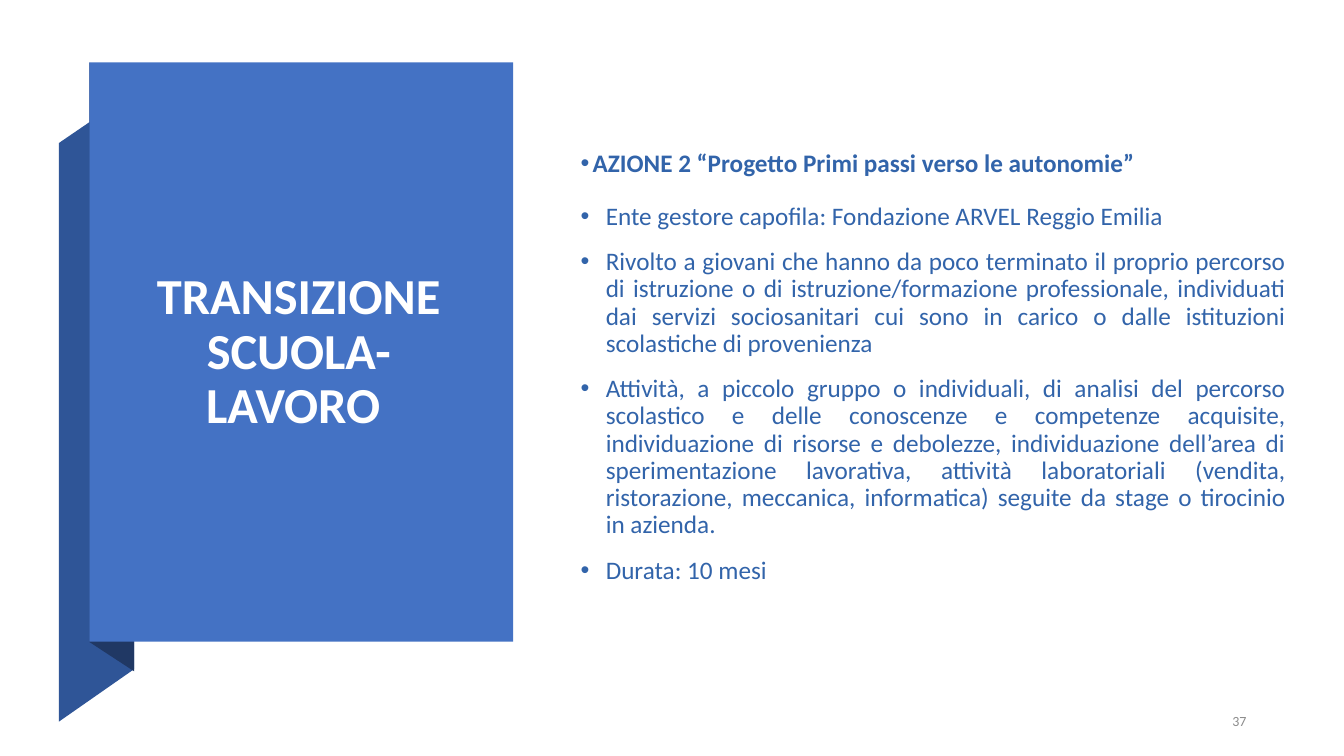
from dataclasses import dataclass

from lxml.etree import SubElement
from pptx import Presentation
from pptx.dml.color import RGBColor
from pptx.enum.shapes import MSO_SHAPE
from pptx.enum.text import MSO_ANCHOR, PP_ALIGN
from pptx.oxml.ns import qn
from pptx.util import Inches, Pt

SLIDE_WIDTH, SLIDE_HEIGHT = Inches(13.33), Inches(7.5)


@dataclass(frozen=True)
class Theme:
    """Hold the font, colours and type sizes of the slide."""

    font: str = "Calibri"
    panel: str = "4472C4"
    ribbon: str = "2F5597"
    fold: str = "203864"
    title: str = "FFFFFF"
    body: str = "3264AA"
    number: str = "8C8C8C"
    title_size: int = 36
    body_size: int = 18
    number_size: int = 10


THEME = Theme()

RIBBON = [(4.38, 95.47), (9.98, 88.53), (9.98, 12.13), (4.38, 18.93)]
FOLD = [(6.65, 84.93), (9.98, 88.8), (9.98, 12), (6.65, 8.27)]
PANEL = (6.65, 8.27, 31.53, 76.6)
TITLE_AREA = (9, 12.93, 26.48, 67.47)
BODY_AREA = (42.46, 19.33, 53.94, 58.67)
NUMBER_AREA = (87.85, 93.07, 5.63, 4.67)

HEADING = "AZIONE 2 “Progetto Primi passi verso le autonomie”"
DETAILS = [
    "Ente gestore capofila: Fondazione ARVEL Reggio Emilia",
    "Rivolto a giovani che hanno da poco terminato il proprio percorso di istruzione "
    "o di istruzione/formazione professionale, individuati dai servizi sociosanitari "
    "cui sono in carico o dalle istituzioni scolastiche di provenienza",
    "Attività, a piccolo gruppo o individuali, di analisi del percorso scolastico e "
    "delle conoscenze e competenze acquisite, individuazione di risorse e debolezze, "
    "individuazione dell’area di sperimentazione lavorativa, attività laboratoriali "
    "(vendita, ristorazione, meccanica, informatica) seguite da stage o tirocinio in "
    "azienda.",
    "Durata: 10 mesi",
]


def across(percent):
    """Turn a percentage of the slide width into a length."""
    return round(SLIDE_WIDTH * percent / 100)


def down(percent):
    """Turn a percentage of the slide height into a length."""
    return round(SLIDE_HEIGHT * percent / 100)


def place(area):
    """Turn left, top, width and height percentages into lengths."""
    left, top, width, height = area
    return across(left), down(top), across(width), down(height)


def paint(shape, color):
    """Give a shape a plain fill without line or shadow."""
    shape.fill.solid()
    shape.fill.fore_color.rgb = RGBColor.from_string(color)
    shape.line.fill.background()
    shape.shadow.inherit = False


def add_outline(shapes, corners, color):
    """Draw a filled polygon through the given corners."""
    points = [(across(x), down(y)) for x, y in corners]
    builder = shapes.build_freeform(*points[0])
    builder.add_line_segments(points[1:])
    paint(builder.convert_to_shape(), color)


def add_banner(slide):
    """Draw the blue panel with its folded ribbon as one group."""
    shapes = slide.shapes.add_group_shape().shapes
    add_outline(shapes, RIBBON, THEME.ribbon)
    add_outline(shapes, FOLD, THEME.fold)
    paint(shapes.add_shape(MSO_SHAPE.RECTANGLE, *place(PANEL)), THEME.panel)


def add_text_frame(slide, area, anchor=MSO_ANCHOR.MIDDLE):
    """Add a wrapping text box and return its text frame."""
    frame = slide.shapes.add_textbox(*place(area)).text_frame
    frame.word_wrap = True
    frame.vertical_anchor = anchor
    return frame


def write(paragraph, text, size, color, alignment, bold=False):
    """Fill a paragraph and set its font and alignment."""
    paragraph.text = text
    paragraph.alignment = alignment
    paragraph.font.name = THEME.font
    paragraph.font.size = Pt(size)
    paragraph.font.bold = bold
    paragraph.font.color.rgb = RGBColor.from_string(color)


def add_bullet(paragraph, indent):
    """Give a paragraph a round bullet with a hanging indent."""
    properties = paragraph._p.get_or_add_pPr()
    properties.set("marL", str(Inches(indent)))
    properties.set("indent", str(-Inches(indent)))
    SubElement(properties, qn("a:buFont")).set("typeface", "Arial")
    SubElement(properties, qn("a:buChar")).set("char", "•")


def add_body(slide):
    """Write the bold heading and the bulleted details."""
    frame = add_text_frame(slide, BODY_AREA, MSO_ANCHOR.TOP)
    for index, text in enumerate([HEADING, *DETAILS]):
        is_heading = index == 0
        paragraph = frame.paragraphs[0] if is_heading else frame.add_paragraph()
        add_bullet(paragraph, 0.12 if is_heading else 0.25)
        write(paragraph, text, THEME.body_size, THEME.body, PP_ALIGN.JUSTIFY, is_heading)
        paragraph.line_spacing = 0.9
        paragraph.space_before = Pt(0 if is_heading else 5)
        paragraph.space_after = Pt(13 if is_heading else 8)


def main():
    """Build the slide and save the presentation."""
    presentation = Presentation()
    presentation.slide_width, presentation.slide_height = SLIDE_WIDTH, SLIDE_HEIGHT
    slide = presentation.slides.add_slide(presentation.slide_layouts[6])
    add_banner(slide)
    title = add_text_frame(slide, TITLE_AREA).paragraphs[0]
    write(title, "TRANSIZIONE SCUOLA-LAVORO ", THEME.title_size, THEME.title,
          PP_ALIGN.CENTER, True)
    title.line_spacing = 0.9
    add_body(slide)
    number = add_text_frame(slide, NUMBER_AREA).paragraphs[0]
    write(number, "37", THEME.number_size, THEME.number, PP_ALIGN.RIGHT)
    presentation.save("out.pptx")


if __name__ == "__main__":
    main()
